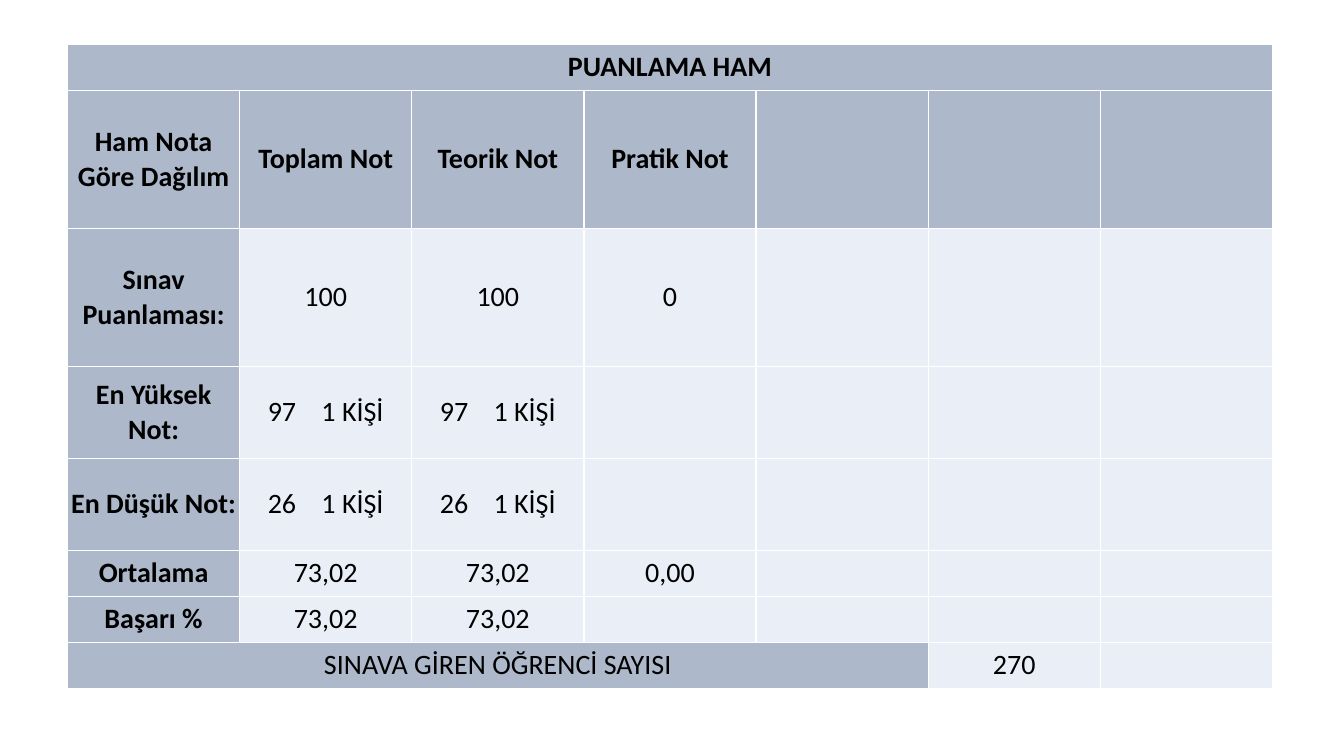
"""Build a slide with the raw score table of an exam."""
from lxml.etree import SubElement
from pptx import Presentation
from pptx.dml.color import RGBColor
from pptx.enum.text import MSO_ANCHOR, PP_ALIGN
from pptx.oxml.ns import qn
from pptx.util import Inches, Pt

COLORS = {"header": "ADB9CA", "body": "EAEFF7", "text": "000000", "border": "FFFFFF"}
COLUMNS = 7
COLUMN_WIDTH = Inches(11.95 / COLUMNS)
LINE_HEIGHT = Inches(6.39 / 14)
ROW_LINES = [1, 3, 3, 2, 2, 1, 1, 1]
LAST_ROW = len(ROW_LINES) - 1
TOTAL_COLUMN = 5
HIGHEST = ("97", "1 KİŞİ")
LOWEST = ("26", "1 KİŞİ")
SCORES = [
    [("PUANLAMA HAM",)],
    [("Ham Nota Göre Dağılım",), ("Toplam Not",), ("Teorik Not",), ("Pratik Not",)],
    [("Sınav Puanlaması:",), ("100",), ("100",), ("0",)],
    [("En Yüksek Not:",), HIGHEST, HIGHEST],
    [("En Düşük Not:",), LOWEST, LOWEST],
    [("Ortalama",), ("73,02",), ("73,02",), ("0,00",)],
    [("Başarı %",), ("73,02",), ("73,02",)],
    [("SINAVA GİREN ÖĞRENCİ SAYISI",)],
]


def add_borders(cell):
    properties = cell._tc.get_or_add_tcPr()
    for position, side in enumerate(["a:lnL", "a:lnR", "a:lnT", "a:lnB"]):
        border = SubElement(properties, qn(side), w=str(Pt(1)))
        fill = SubElement(border, qn("a:solidFill"))
        SubElement(fill, qn("a:srgbClr"), val=COLORS["border"])
        properties.insert(position, border)


def write_score(cell, parts, bold):
    paragraph = cell.text_frame.paragraphs[0]
    paragraph.alignment = PP_ALIGN.CENTER
    paragraph.text = parts[0]
    for part in parts[1:]:
        gap = paragraph.add_run()
        gap.text = " "
        gap._r.get_or_add_rPr().set("spc", "1350")
        paragraph.add_run().text = part
    for run in paragraph.runs:
        run.font.name = "Calibri"
        run.font.size = Pt(20)
        run.font.bold = bold
        run.font.color.rgb = RGBColor.from_string(COLORS["text"])


presentation = Presentation()
presentation.slide_width = Inches(13.33)
presentation.slide_height = Inches(7.5)
slide = presentation.slides.add_slide(presentation.slide_layouts[6])

score_table = slide.shapes.add_table(
    len(ROW_LINES), COLUMNS, Inches(0.67), Inches(0.44),
    COLUMN_WIDTH * COLUMNS, LINE_HEIGHT * sum(ROW_LINES),
).table
for column in score_table.columns:
    column.width = COLUMN_WIDTH
for row, lines in zip(score_table.rows, ROW_LINES):
    row.height = LINE_HEIGHT * lines

for row_index in range(len(ROW_LINES)):
    for column_index in range(COLUMNS):
        cell = score_table.cell(row_index, column_index)
        is_header = row_index < 2 or column_index == 0
        cell.fill.solid()
        cell.fill.fore_color.rgb = RGBColor.from_string(COLORS["header" if is_header else "body"])
        cell.vertical_anchor = MSO_ANCHOR.MIDDLE
        cell.margin_left = cell.margin_right = cell.margin_top = cell.margin_bottom = 0
        add_borders(cell)

for row_index, row_scores in enumerate(SCORES):
    for column_index, parts in enumerate(row_scores):
        bold = row_index < 2 or (column_index == 0 and row_index < LAST_ROW)
        write_score(score_table.cell(row_index, column_index), parts, bold)
write_score(score_table.cell(LAST_ROW, TOTAL_COLUMN), ("270",), False)

score_table.cell(0, 0).merge(score_table.cell(0, COLUMNS - 1))
score_table.cell(LAST_ROW, 0).merge(score_table.cell(LAST_ROW, TOTAL_COLUMN - 1))

presentation.save("out.pptx")
